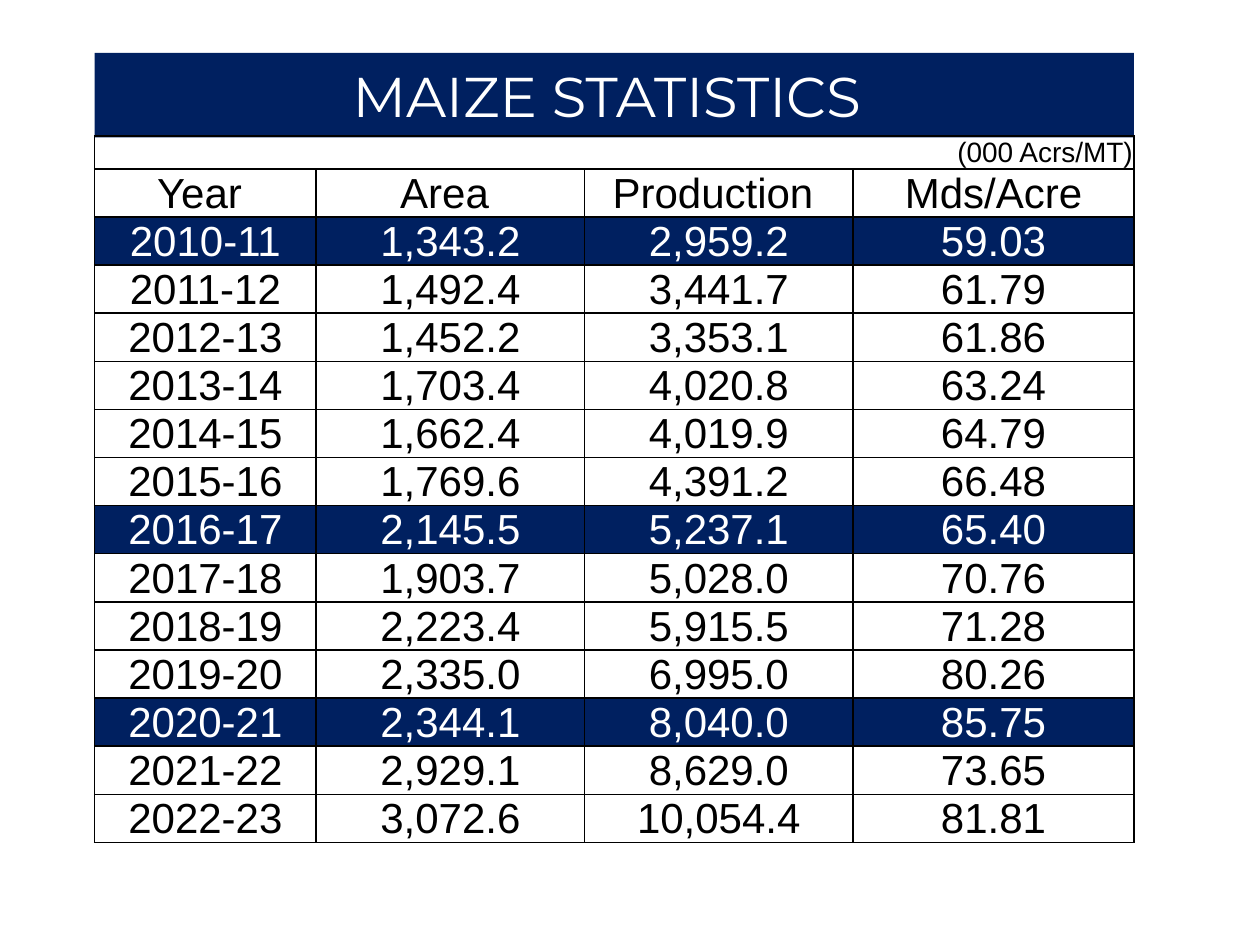
from lxml.etree import SubElement
from pptx import Presentation
from pptx.dml.color import RGBColor
from pptx.enum.text import MSO_ANCHOR, PP_ALIGN
from pptx.oxml.ns import qn
from pptx.util import Inches, Pt

COLORS = {"navy": "002060", "white": "FFFFFF", "black": "000000"}
LEFT, WIDTH = 0.75, 8.25
COL_WIDTHS = [1.76, 2.13, 2.13, 2.23]
UNIT_ROW_H, ROW_H = 0.26, 0.38
UNIT = "(000 Acrs/MT)"
HEADERS = ("Year ", "Area ", "Production ", "Mds/Acre")
MAIZE = [
    ("2010-11", "1,343.2", "2,959.2", "59.03"),
    ("2011-12", "1,492.4", "3,441.7", "61.79"),
    ("2012-13", "1,452.2", "3,353.1", "61.86"),
    ("2013-14", "1,703.4", "4,020.8", "63.24"),
    ("2014-15", "1,662.4", "4,019.9", "64.79"),
    ("2015-16", "1,769.6", "4,391.2", "66.48"),
    ("2016-17", "2,145.5", "5,237.1", "65.40"),
    ("2017-18", "1,903.7", "5,028.0", "70.76"),
    ("2018-19", "2,223.4", "5,915.5", "71.28"),
    ("2019-20", "2,335.0", "6,995.0", "80.26"),
    ("2020-21", "2,344.1", "8,040.0", "85.75"),
    ("2021-22", "2,929.1", "8,629.0", "73.65"),
    ("2022-23", "3,072.6", "10,054.4", "81.81"),
]
HIGHLIGHTED = {"2010-11", "2016-17", "2020-21"}


def rgb(name):
    return RGBColor.from_string(COLORS[name])


def write_text(tf, text, size=24, font="Arial", color="black", align=PP_ALIGN.CENTER):
    p = tf.paragraphs[0]
    p.alignment = align
    r = p.add_run()
    r.text = text
    r.font.size = Pt(size)
    r.font.name = font
    r.font.bold = False
    r.font.color.rgb = rgb(color)


def fill_with(fill, color):
    """Give a solid fill, or none when color is None."""
    if color:
        fill.solid()
        fill.fore_color.rgb = rgb(color)
    else:
        fill.background()


def set_borders(cell, color="black", width=1):
    tcPr = cell._tc.get_or_add_tcPr()
    for side in ("a:lnL", "a:lnR", "a:lnT", "a:lnB"):
        ln = SubElement(tcPr, qn(side), w=str(Pt(width)))
        solid = SubElement(ln, qn("a:solidFill"))
        SubElement(solid, qn("a:srgbClr"), val=COLORS[color])


def format_cell(cell, fill=None):
    cell.margin_left = cell.margin_right = cell.margin_top = Inches(0.01)
    cell.margin_bottom = 0
    cell.vertical_anchor = MSO_ANCHOR.MIDDLE
    set_borders(cell)
    fill_with(cell.fill, fill)


def add_title(s, text):
    sp = s.shapes.title
    sp.left, sp.top = Inches(LEFT), Inches(0.42)
    sp.width, sp.height = Inches(WIDTH), Inches(0.67)
    fill_with(sp.fill, "navy")
    sp.text_frame.vertical_anchor = MSO_ANCHOR.MIDDLE
    write_text(sp.text_frame, text, size=32, font="Montserrat", color="white")


def add_statistics_table(s):
    rows = [HEADERS, *MAIZE]
    height = UNIT_ROW_H + ROW_H * len(rows)
    table = s.shapes.add_table(len(rows) + 1, len(HEADERS), Inches(LEFT), Inches(1.08),
                               Inches(WIDTH), Inches(height)).table
    table.first_row = table.horz_banding = False
    for column, width in zip(table.columns, COL_WIDTHS):
        column.width = Inches(width)
    for i, row in enumerate(table.rows):
        row.height = Inches(ROW_H if i else UNIT_ROW_H)

    for cell in table.rows[0].cells:
        format_cell(cell)
    unit_cell = table.cell(0, 0)
    unit_cell.merge(table.cell(0, len(HEADERS) - 1))
    write_text(unit_cell.text_frame, UNIT, size=16, align=PP_ALIGN.RIGHT)

    for i, values in enumerate(rows, start=1):
        marked = values[0] in HIGHLIGHTED
        for j, value in enumerate(values):
            cell = table.cell(i, j)
            format_cell(cell, fill="navy" if marked else None)
            write_text(cell.text_frame, value, color="white" if marked else "black")


def main():
    prs = Presentation()
    prs.slide_width, prs.slide_height = Inches(10), Inches(7.5)
    s = prs.slides.add_slide(prs.slide_layouts[5])
    add_title(s, "MAIZE STATISTICS ")
    add_statistics_table(s)
    prs.save("out.pptx")


if __name__ == "__main__":
    main()
